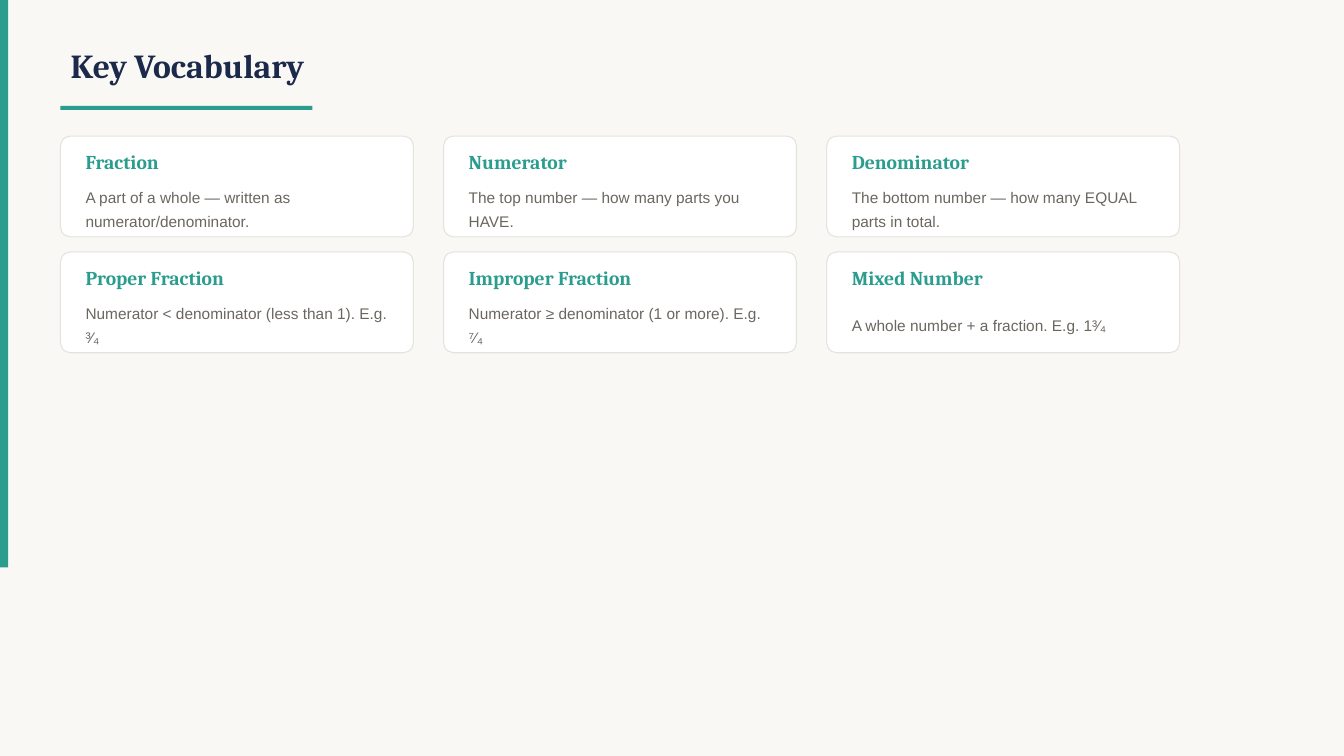
from pptx import Presentation
from pptx.dml.color import RGBColor
from pptx.enum.shapes import MSO_SHAPE
from pptx.enum.text import MSO_ANCHOR, MSO_AUTO_SIZE, PP_ALIGN
from pptx.util import Inches, Pt

TITLE = "Key Vocabulary"
TERMS = [
    ("Fraction", "A part of a whole — written as numerator/denominator."),
    ("Numerator", "The top number — how many parts you HAVE."),
    ("Denominator", "The bottom number — how many EQUAL parts in total."),
    ("Proper Fraction", "Numerator < denominator (less than 1). E.g. ³⁄₄"),
    ("Improper Fraction", "Numerator ≥ denominator (1 or more). E.g. ⁷⁄₄"),
    ("Mixed Number", "A whole number + a fraction. E.g. 1³⁄₄"),
]

TEAL, NAVY, GREY = "2A9D8F", "1B2A4A", "6B6660"
CREAM, WHITE, BORDER = "FAF8F5", "FFFFFF", "E5E2DC"

# Card grid, in inches
COLUMNS = 3
LEFT, TOP = 0.6, 1.35
CARD_W, CARD_H = 3.5, 1
GAP_X, GAP_Y = 0.3, 0.15
PADDING = 0.15


def color(hex_value):
    return RGBColor.from_string(hex_value)


def add_block(slide, kind, x, y, w, h, fill, line=None):
    block = slide.shapes.add_shape(kind, Inches(x), Inches(y), Inches(w), Inches(h))
    block.shadow.inherit = False
    block.fill.solid()
    block.fill.fore_color.rgb = color(fill)
    if line:
        block.line.color.rgb = color(line)
        block.line.width = Pt(0.75)
    else:
        block.line.fill.background()
    return block


def write(holder, text, *, size, font, fill, bold=False, spacing=None):
    frame = holder.text_frame
    frame.word_wrap = True
    frame.auto_size = MSO_AUTO_SIZE.NONE
    frame.vertical_anchor = MSO_ANCHOR.MIDDLE
    paragraph = frame.paragraphs[0]
    paragraph.alignment = PP_ALIGN.LEFT
    if spacing:
        paragraph.line_spacing = spacing
    run = paragraph.add_run()
    run.text = text
    run.font.size = Pt(size)
    run.font.name = font
    run.font.bold = bold
    run.font.color.rgb = color(fill)


def add_text(slide, text, x, y, w, h, **style):
    box = slide.shapes.add_textbox(Inches(x), Inches(y), Inches(w), Inches(h))
    write(box, text, **style)


def add_card(slide, x, y, term, meaning):
    card = add_block(slide, MSO_SHAPE.ROUNDED_RECTANGLE, x, y, CARD_W, CARD_H,
                     WHITE, BORDER)
    card.adjustments[0] = 0.1
    text_x, text_w = x + PADDING, CARD_W - 2 * PADDING
    add_text(slide, term, text_x, y + 0.08, text_w, 0.35,
             size=14, font="Cambria", fill=TEAL, bold=True)
    add_text(slide, meaning, text_x, y + 0.45, text_w, 0.5,
             size=11, font="Arial", fill=GREY, spacing=1.3)


def main():
    prs = Presentation()
    prs.slide_width, prs.slide_height = Inches(13.33), Inches(7.5)
    slide = prs.slides.add_slide(prs.slide_layouts[5])
    slide.background.fill.solid()
    slide.background.fill.fore_color.rgb = color(CREAM)

    # Side bar, title and underline
    add_block(slide, MSO_SHAPE.RECTANGLE, 0, 0, 0.08, 5.63, TEAL)
    title = slide.shapes.title
    title.left, title.top = Inches(LEFT), Inches(0.3)
    title.width, title.height = Inches(10), Inches(0.7)
    write(title, TITLE, size=24, font="Cambria", fill=NAVY, bold=True)
    add_block(slide, MSO_SHAPE.RECTANGLE, LEFT, 1.05, 2.5, 0.04, TEAL)

    # Vocabulary cards
    for index, (term, meaning) in enumerate(TERMS):
        row, column = divmod(index, COLUMNS)
        add_card(slide, LEFT + column * (CARD_W + GAP_X),
                 TOP + row * (CARD_H + GAP_Y), term, meaning)

    prs.save("out.pptx")


if __name__ == "__main__":
    main()
